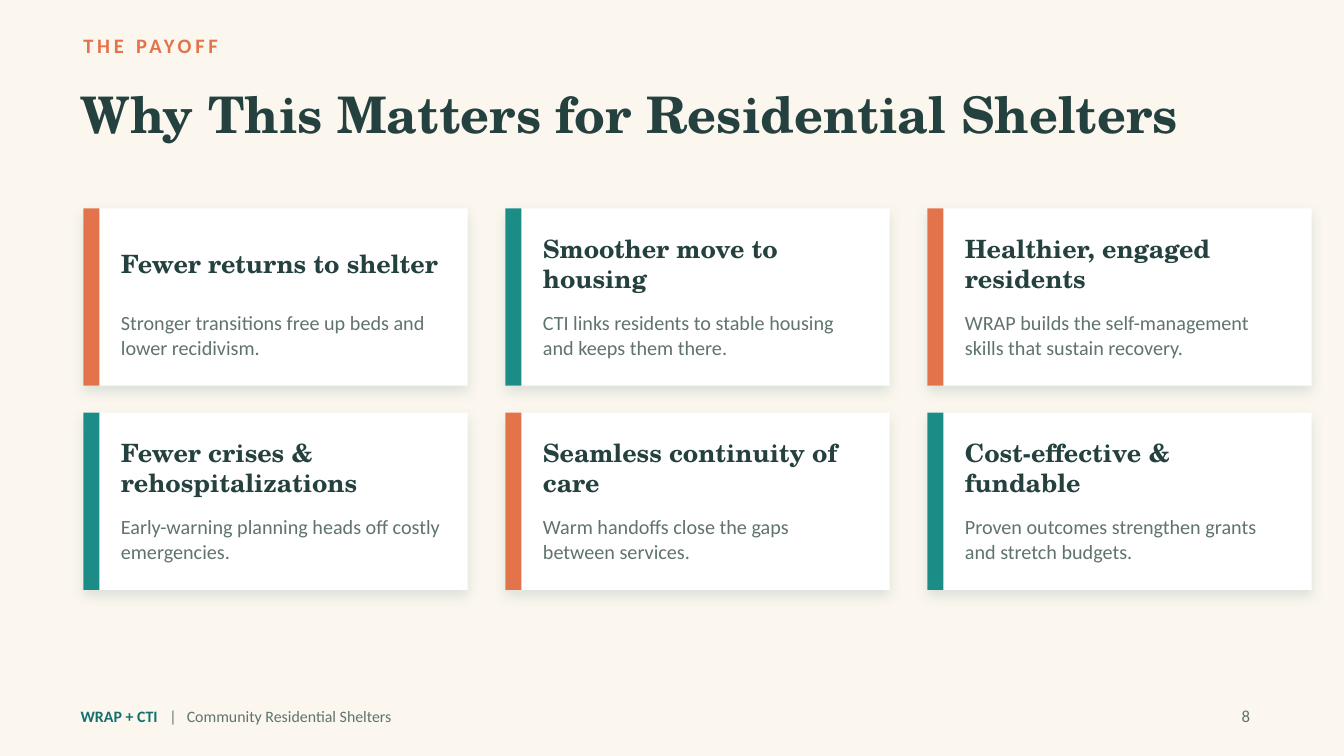
import pptx
import pptx.dml.color
import pptx.enum.shapes
import pptx.enum.text
import pptx.oxml
import pptx.oxml.ns
import pptx.util
from pptx.util import Inches

SERIF, SANS = "TeX Gyre Schola", "Calibri"
CREAM, WHITE, INK, GREY = "FBF7EE", "FFFFFF", "24413F", "60736F"
CORAL, TEAL, DARK_TEAL = "E2734A", "1C8C86", "12706E"

CARDS = [
    ("Fewer returns to shelter",
     "Stronger transitions free up beds and lower recidivism."),
    ("Smoother move to housing",
     "CTI links residents to stable housing and keeps them there."),
    ("Healthier, engaged residents",
     "WRAP builds the self-management skills that sustain recovery."),
    ("Fewer crises & rehospitalizations",
     "Early-warning planning heads off costly emergencies."),
    ("Seamless continuity of care",
     "Warm handoffs close the gaps between services."),
    ("Cost-effective & fundable",
     "Proven outcomes strengthen grants and stretch budgets."),
]


def rgb(color):
    return pptx.dml.color.RGBColor.from_string(color)


def style_font(font, name, size, color, bold=False):
    font.name = name
    font.size = pptx.util.Pt(size)
    font.color.rgb = rgb(color)
    font.bold = bold


def prepare_frame(frame, inset=0.0):
    frame.word_wrap = True
    frame.auto_size = pptx.enum.text.MSO_AUTO_SIZE.NONE
    frame.vertical_anchor = pptx.enum.text.MSO_ANCHOR.MIDDLE
    frame.margin_left = frame.margin_right = Inches(inset)
    frame.margin_top = frame.margin_bottom = Inches(inset / 2)


def add_text(slide, box, text, name, size, color, bold=False, inset=0.0):
    """Add a one-paragraph text box and return the paragraph."""
    frame = slide.shapes.add_textbox(*map(Inches, box)).text_frame
    prepare_frame(frame, inset)
    paragraph = frame.paragraphs[0]
    paragraph.text = text
    style_font(paragraph.font, name, size, color, bold)
    return paragraph


def add_rectangle(slide, box, color):
    shape = slide.shapes.add_shape(
        pptx.enum.shapes.MSO_SHAPE.RECTANGLE, *map(Inches, box))
    shape.shadow.inherit = False
    shape.fill.solid()
    shape.fill.fore_color.rgb = rgb(color)
    shape.line.fill.background()
    return shape


def add_soft_shadow(shape):
    effects = shape._element.spPr.find(pptx.oxml.ns.qn("a:effectLst"))
    effects.append(pptx.oxml.parse_xml(
        f'<a:outerShdw {pptx.oxml.ns.nsdecls("a")} blurRad="{pptx.util.Pt(7)}" '
        f'dist="{pptx.util.Pt(3)}" dir="5400000" algn="bl" rotWithShape="0">'
        '<a:srgbClr val="0E4F4F"><a:alpha val="12000"/></a:srgbClr>'
        '</a:outerShdw>'))


def add_header(slide, left, top):
    kicker = add_text(slide, (left + 0.02, top, 8, 0.28), "THE PAYOFF",
                      SANS, 11, CORAL, bold=True)
    kicker.runs[0]._r.get_or_add_rPr().set("spc", "200")

    title = slide.shapes.title
    title.left, title.top, title.width, title.height = map(
        Inches, (left, top + 0.22, 8.8, 0.85))
    prepare_frame(title.text_frame)
    paragraph = title.text_frame.paragraphs[0]
    paragraph.text = "Why This Matters for Residential Shelters"
    paragraph.alignment = pptx.enum.text.PP_ALIGN.LEFT
    style_font(paragraph.font, SERIF, 27, INK, bold=True)


def add_card(slide, box, accent, heading, body):
    left, top, width, height = box
    add_soft_shadow(add_rectangle(slide, box, WHITE))
    add_rectangle(slide, (left, top, 0.12, height), accent)
    text_left, text_width = left + 0.28, width - 0.46
    add_text(slide, (text_left, top + 0.16, text_width, 0.5), heading,
             SERIF, 13.5, INK, bold=True)
    paragraph = add_text(slide, (text_left, top + 0.64, text_width, 0.6), body,
                         SANS, 10.8, GREY)
    paragraph.line_spacing = 1.02


def add_card_grid(slide, box, columns=3, rows=2, gap_x=0.28, gap_y=0.2):
    left, top, width, height = box
    card_width = (width - gap_x * (columns - 1)) / columns
    card_height = (height - gap_y * (rows - 1)) / rows
    for index, (heading, body) in enumerate(CARDS):
        row, column = divmod(index, columns)
        card_box = (left + column * (card_width + gap_x),
                    top + row * (card_height + gap_y), card_width, card_height)
        add_card(slide, card_box, (CORAL, TEAL)[index % 2], heading, body)


def add_footer(slide, box):
    left, top, width, height = box
    frame = slide.shapes.add_textbox(
        *map(Inches, (left, top, 7, height))).text_frame
    prepare_frame(frame)
    paragraph = frame.paragraphs[0]
    tabs = "".join(f'<a:tab pos="{Inches(stop)}" algn="l"/>'
                   for stop in (0.66, 0.79))
    paragraph._p.get_or_add_pPr().append(pptx.oxml.parse_xml(
        f'<a:tabLst {pptx.oxml.ns.nsdecls("a")}>{tabs}</a:tabLst>'))
    for text, color, bold in (("WRAP + CTI", DARK_TEAL, True),
                              ("\t|\tCommunity Residential Shelters", GREY, False)):
        run = paragraph.add_run()
        run.text = text
        style_font(run.font, SANS, 8.5, color, bold)

    number = add_text(slide, (left + width - 0.4, top, 0.4, height), "8",
                      SANS, 9, GREY, inset=0.1)
    number.alignment = pptx.enum.text.PP_ALIGN.RIGHT


def main():
    presentation = pptx.Presentation()
    presentation.slide_width = Inches(10)
    presentation.slide_height = Inches(10 * 9 / 16)
    slide = presentation.slides.add_slide(presentation.slide_layouts[5])
    slide.background.fill.solid()
    slide.background.fill.fore_color.rgb = rgb(CREAM)
    add_header(slide, 0.6, 0.2)
    add_card_grid(slide, (0.62, 1.55, 9.14, 2.84))
    add_footer(slide, (0.6, 5.18, 8.8, 0.3))
    presentation.save("out.pptx")


if __name__ == "__main__":
    main()
